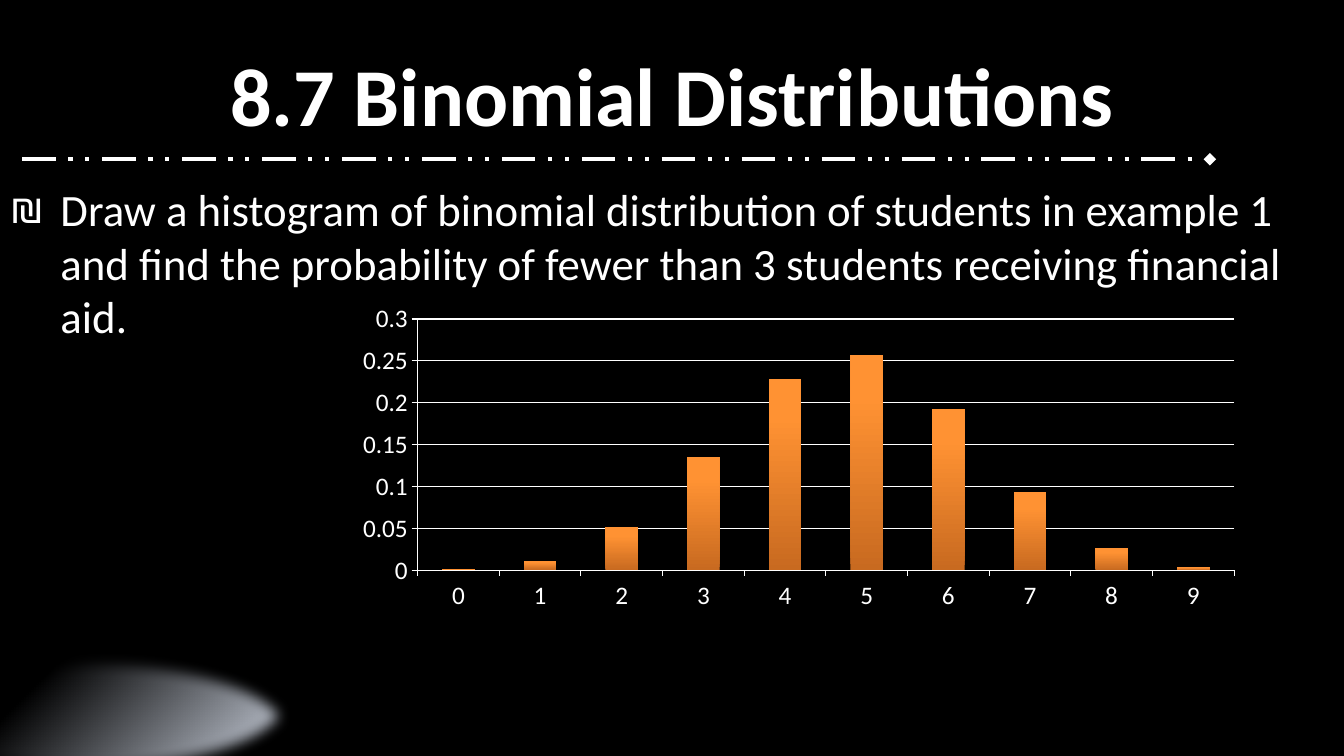
from lxml.etree import SubElement
from pptx import Presentation
from pptx.chart.data import CategoryChartData
from pptx.dml.color import RGBColor
from pptx.enum.chart import XL_CHART_TYPE, XL_TICK_MARK
from pptx.enum.dml import MSO_LINE
from pptx.enum.shapes import MSO_CONNECTOR, MSO_SHAPE
from pptx.enum.text import MSO_ANCHOR, MSO_AUTO_SIZE, PP_ALIGN
from pptx.oxml.ns import qn
from pptx.util import Inches, Pt

BLACK = RGBColor(0x00, 0x00, 0x00)
WHITE = RGBColor(0xFF, 0xFF, 0xFF)
GLOW = RGBColor(0xE1, 0xE8, 0xF5)
ORANGE = RGBColor(0xFF, 0x92, 0x33)
RUST = RGBColor(0xC8, 0x6A, 0x20)
FACE = "Calibri"
ODDS = [0.001, 0.011, 0.051, 0.135, 0.228, 0.257, 0.193, 0.093, 0.026, 0.003]


def place(shape, left, top, width, height):
    shape.left, shape.top = Inches(left), Inches(top)
    shape.width, shape.height = Inches(width), Inches(height)


def style(font, size, bold=False):
    font.name = FACE
    font.size = Pt(size)
    font.bold = bold
    font.color.rgb = WHITE


def blend(fill, angle, stops):
    fill.gradient()
    fill.gradient_angle = angle
    for stop, (spot, color) in zip(fill.gradient_stops, stops):
        stop.position = spot
        stop.color.rgb = color


def add_glow(slide):
    glow = slide.shapes.add_shape(
        MSO_SHAPE.OVAL, Inches(-1.22), Inches(6.44), Inches(4.16), Inches(1.31))
    glow.shadow.inherit = False
    blend(glow.fill, 315, [(0.35, BLACK), (1, GLOW)])
    glow.line.fill.background()
    effects = glow._element.spPr.find(qn("a:effectLst"))
    SubElement(effects, qn("a:softEdge"), rad=str(Pt(10)))


def add_rule(slide):
    rule = slide.shapes.add_connector(
        MSO_CONNECTOR.STRAIGHT, Inches(0.22), Inches(1.58), Inches(12), Inches(1.58))
    rule.line.color.rgb = WHITE
    rule.line.width = Pt(3)
    rule.line.dash_style = MSO_LINE.DASH_DOT_DOT
    SubElement(rule.line._get_or_add_ln(), qn("a:tailEnd"), type="diamond")
    SubElement(rule._element.spPr, qn("a:effectLst"))


def set_title(slide, text):
    title = slide.shapes.title
    place(title, 0, 0.3, 13.33, 1.25)
    frame = title.text_frame
    frame.text = text
    frame.auto_size = MSO_AUTO_SIZE.NONE
    frame.vertical_anchor = MSO_ANCHOR.MIDDLE
    para = frame.paragraphs[0]
    para.alignment = PP_ALIGN.CENTER
    style(para.font, 58.7, True)


def set_body(slide, text):
    body = slide.placeholders[1]
    place(body, 0, 1.75, 13.33, 5.75)
    frame = body.text_frame
    frame.text = text
    frame.auto_size = MSO_AUTO_SIZE.NONE
    para = frame.paragraphs[0]
    para.space_before = Pt(0)
    props = para._p.get_or_add_pPr()
    props.set("marL", str(Inches(0.5)))
    props.set("indent", str(Inches(-0.5)))
    SubElement(props, qn("a:buFont"), typeface=FACE)
    SubElement(props, qn("a:buChar"), char="₪")
    style(para.font, 32)


def add_bars(slide):
    data = CategoryChartData()
    data.categories = [str(count) for count in range(len(ODDS))]
    data.add_series("Series 1", ODDS)
    chart = slide.shapes.add_chart(
        XL_CHART_TYPE.COLUMN_CLUSTERED, Inches(3.42), Inches(2.95),
        Inches(9), Inches(3.17), data).chart
    style(chart.font, 18)
    chart.has_legend = False
    chart.has_title = False
    for axis in (chart.category_axis, chart.value_axis):
        axis.major_tick_mark = XL_TICK_MARK.OUTSIDE
        axis.minor_tick_mark = XL_TICK_MARK.NONE
        axis.format.line.color.rgb = WHITE
        axis.format.line.width = Pt(0.75)
    scale = chart.value_axis
    scale.minimum_scale, scale.maximum_scale, scale.major_unit = 0, 0.3, 0.05
    scale.has_major_gridlines = True
    grid = scale.major_gridlines.format.line
    grid.color.rgb = WHITE
    grid.width = Pt(0.75)
    plot = chart.plots[0]
    plot.gap_width = 150
    plot.vary_by_categories = False
    bars = plot.series[0]
    bars.invert_if_negative = False
    blend(bars.format.fill, 90, [(0, RUST), (0.8, ORANGE)])


def main():
    deck = Presentation()
    deck.slide_width, deck.slide_height = Inches(13.33), Inches(7.5)
    slide = deck.slides.add_slide(deck.slide_layouts[1])
    slide.background.fill.solid()
    slide.background.fill.fore_color.rgb = BLACK
    add_glow(slide)
    add_rule(slide)
    set_title(slide, "8.7 Binomial Distributions")
    set_body(slide, "Draw a histogram of binomial distribution of students in "
                    "example 1 and find the probability of fewer than 3 students "
                    "receiving financial aid.")
    add_bars(slide)
    deck.save("out.pptx")


if __name__ == "__main__":
    main()
